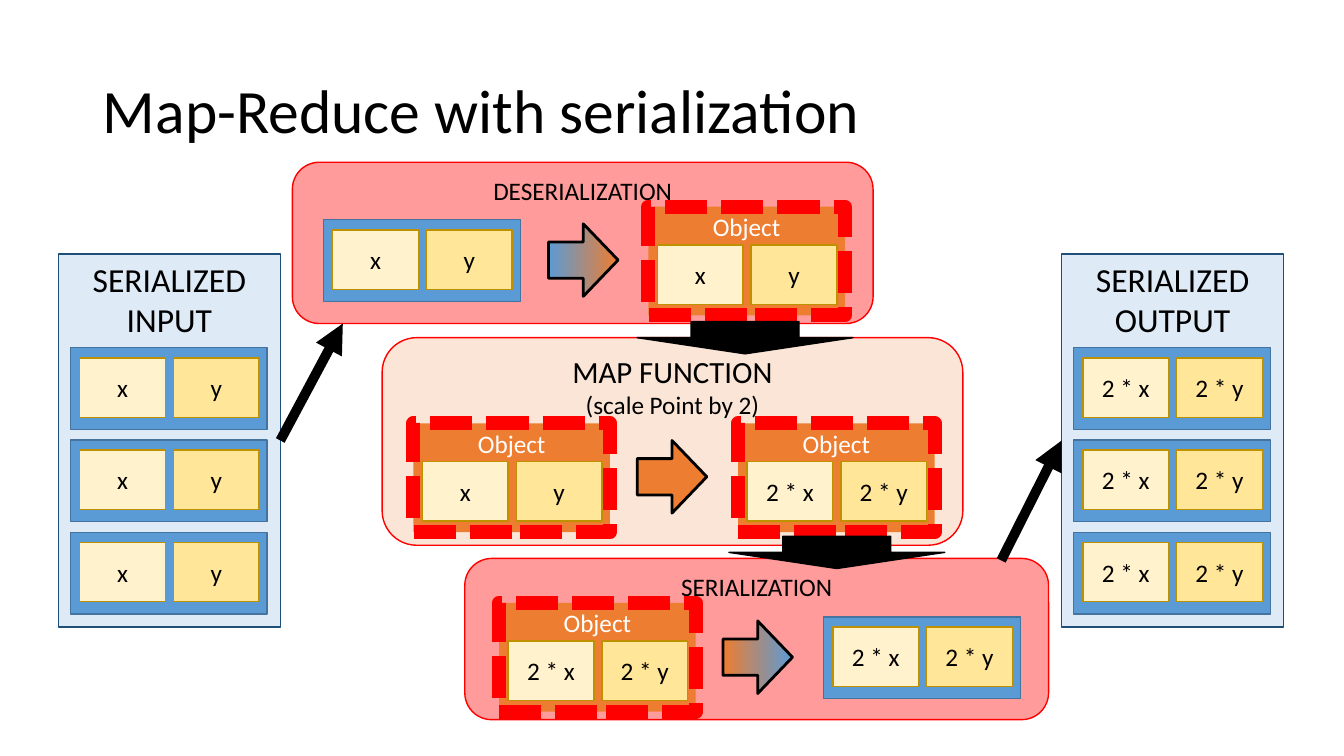
from dataclasses import dataclass

from lxml.etree import SubElement
from pptx import Presentation
from pptx.dml.color import RGBColor
from pptx.enum.dml import MSO_LINE
from pptx.enum.shapes import MSO_CONNECTOR, MSO_SHAPE
from pptx.enum.text import MSO_ANCHOR, MSO_AUTO_SIZE, PP_ALIGN
from pptx.oxml.ns import qn
from pptx.shapes.autoshape import Shape
from pptx.shapes.connector import Connector
from pptx.slide import Slide
from pptx.util import Inches, Pt

FONT = "Calibri"
BLACK = RGBColor(0x00, 0x00, 0x00)
WHITE = RGBColor(0xFF, 0xFF, 0xFF)
RED = RGBColor(0xFF, 0x00, 0x00)
BLUE = RGBColor(0x5B, 0x9B, 0xD5)
BLUE_LINE = RGBColor(0x43, 0x73, 0x9E)
PALE_BLUE = RGBColor(0xDE, 0xEB, 0xF7)
NAVY = RGBColor(0x1F, 0x4E, 0x79)
ORANGE = RGBColor(0xED, 0x7D, 0x31)
PEACH = RGBColor(0xFB, 0xE5, 0xD6)
PINK = RGBColor(0xFF, 0x9B, 0x9B)
CREAM = RGBColor(0xFF, 0xF2, 0xCC)
YELLOW = RGBColor(0xFF, 0xE6, 0x99)
GOLD = RGBColor(0xBF, 0x90, 0x00)

POINT = ("x", "y")
SCALED_POINT = ("2 * x", "2 * y")


@dataclass(frozen=True)
class Box:
    left: float
    top: float
    width: float
    height: float


@dataclass(frozen=True)
class TextLine:
    text: str
    size: float = 18
    color: RGBColor = BLACK


@dataclass(frozen=True)
class Record:
    left: float
    top: float
    fields: tuple[str, str]
    is_object: bool = False


@dataclass(frozen=True)
class Panel:
    left: float
    heading: tuple[str, str]
    fields: tuple[str, str]


@dataclass(frozen=True)
class Stage:
    box: Box
    fill: RGBColor
    heading: tuple[TextLine, ...]
    records: tuple[Record, Record]
    arrow: Box
    arrow_colors: tuple[RGBColor, RGBColor]


PANELS = (
    Panel(0.58, ("SERIALIZED", "INPUT"), POINT),
    Panel(10.53, ("SERIALIZED", "OUTPUT"), SCALED_POINT),
)
STAGES = (
    Stage(Box(2.9, 1.61, 5.76, 1.6), PINK, (TextLine("DESERIALIZATION"),),
          (Record(3.21, 2.18, POINT), Record(6.43, 2.05, POINT, True)),
          Box(5.44, 2.22, 0.69, 0.72), (BLUE, ORANGE)),
    Stage(Box(3.79, 3.35, 5.76, 2.06), PEACH,
          (TextLine("MAP FUNCTION", 22), TextLine("(scale Point by 2)")),
          (Record(4.1, 4.2, POINT, True), Record(7.32, 4.2, SCALED_POINT, True)),
          Box(6.32, 4.37, 0.69, 0.72), (ORANGE, ORANGE)),
    Stage(Box(4.61, 5.54, 5.79, 1.6), PINK, (TextLine("SERIALIZATION"),),
          (Record(8.17, 6.12, SCALED_POINT), Record(4.95, 5.98, SCALED_POINT, True)),
          Box(7.17, 6.16, 0.69, 0.72), (ORANGE, BLUE)),
)
HANDOVERS = (Box(6.32, 3.19, 2.14, 0.32), Box(7.23, 5.32, 2.14, 0.32))


def add_box(slide: Slide, kind: MSO_SHAPE, box: Box, fill: RGBColor, line: RGBColor,
            line_width: float = 1, lines: tuple[TextLine, ...] = (),
            anchor: MSO_ANCHOR = MSO_ANCHOR.TOP) -> Shape:
    shape = slide.shapes.add_shape(kind, Inches(box.left), Inches(box.top),
                                   Inches(box.width), Inches(box.height))
    shape.shadow.inherit = False
    shape.fill.solid()
    shape.fill.fore_color.rgb = fill
    shape.line.color.rgb = line
    shape.line.width = Pt(line_width)
    frame = shape.text_frame
    frame.vertical_anchor = anchor
    frame.text = "\n".join(line.text for line in lines)
    for para, text_line in zip(frame.paragraphs, lines):
        para.alignment = PP_ALIGN.CENTER
        for span in para.runs:
            span.font.name = FONT
            span.font.size = Pt(text_line.size)
            span.font.color.rgb = text_line.color
    return shape


def add_record(slide: Slide, record: Record) -> None:
    """Draw a two-field point, either serialized or as a dashed object."""
    if record.is_object:
        holder = add_box(slide, MSO_SHAPE.RECTANGLE,
                         Box(record.left, record.top, 1.95, 1.08), ORANGE, RED, 10,
                         (TextLine("Object", color=WHITE),))
        holder.line.dash_style = MSO_LINE.SQUARE_DOT
    else:
        add_box(slide, MSO_SHAPE.RECTANGLE,
                Box(record.left, record.top, 1.95, 0.81), BLUE, BLUE_LINE)
    field_top = record.top + (0.38 if record.is_object else 0.1)
    for index, (text, fill) in enumerate(zip(record.fields, (CREAM, YELLOW))):
        add_box(slide, MSO_SHAPE.RECTANGLE,
                Box(record.left + 0.09 + 0.93 * index, field_top, 0.85, 0.59),
                fill, GOLD, 1, (TextLine(text),), MSO_ANCHOR.MIDDLE)


def add_panel(slide: Slide, panel: Panel) -> Shape:
    heading = tuple(TextLine(text, 24) for text in panel.heading)
    shape = add_box(slide, MSO_SHAPE.RECTANGLE, Box(panel.left, 2.52, 2.2, 3.7),
                    PALE_BLUE, NAVY, 1, heading)
    for row in range(3):
        add_record(slide, Record(panel.left + 0.12, 3.45 + 0.915 * row, panel.fields))
    return shape


def add_stage(slide: Slide, stage: Stage) -> None:
    add_box(slide, MSO_SHAPE.ROUNDED_RECTANGLE, stage.box, stage.fill, RED, 1,
            stage.heading)
    for record in stage.records:
        add_record(slide, record)
    start, end = stage.arrow_colors
    arrow = add_box(slide, MSO_SHAPE.RIGHT_ARROW, stage.arrow, start, BLACK, 2)
    if start != end:
        arrow.fill.gradient()
        arrow.fill.gradient_angle = 0
        for stop, color, position in zip(arrow.fill.gradient_stops, (start, end), (0, 1)):
            stop.color.rgb = color
            stop.position = position


def add_arrow(slide: Slide, start: tuple[float, float],
              end: tuple[float, float]) -> Connector:
    arrow = slide.shapes.add_connector(MSO_CONNECTOR.STRAIGHT,
                                       *map(Inches, start), *map(Inches, end))
    arrow.line.color.rgb = BLACK
    arrow.line.width = Pt(7)
    SubElement(arrow.line._get_or_add_ln(), qn("a:tailEnd"), type="triangle")
    SubElement(arrow._element.spPr, qn("a:effectLst"))
    return arrow


def add_title(slide: Slide, text: str) -> None:
    title = slide.shapes.title
    title.left, title.top = Inches(0.92), Inches(0.4)
    title.width, title.height = Inches(11.5), Inches(1.45)
    frame = title.text_frame
    frame.text = text
    frame.auto_size = MSO_AUTO_SIZE.NONE
    frame.vertical_anchor = MSO_ANCHOR.MIDDLE
    para = frame.paragraphs[0]
    para.alignment = PP_ALIGN.LEFT
    para.line_spacing = 0.9
    font = para.runs[0].font
    font.name = FONT
    font.size = Pt(44)
    font.color.rgb = BLACK


def main() -> None:
    deck = Presentation()
    deck.slide_width, deck.slide_height = Inches(13.33), Inches(7.5)
    page = deck.slides.add_slide(deck.slide_layouts[5])
    add_title(page, "Map-Reduce with serialization")
    input_panel, output_panel = [add_panel(page, panel) for panel in PANELS]
    for stage in STAGES:
        add_stage(page, stage)
    add_arrow(page, (2.78, 4.37), (3.4, 3.21)).begin_connect(input_panel, 3)
    add_arrow(page, (9.93, 5.56), (10.53, 4.37)).end_connect(output_panel, 1)
    for box in HANDOVERS:
        add_box(page, MSO_SHAPE.DOWN_ARROW, box, BLACK, BLACK)
    deck.save("out.pptx")


if __name__ == "__main__":
    main()
